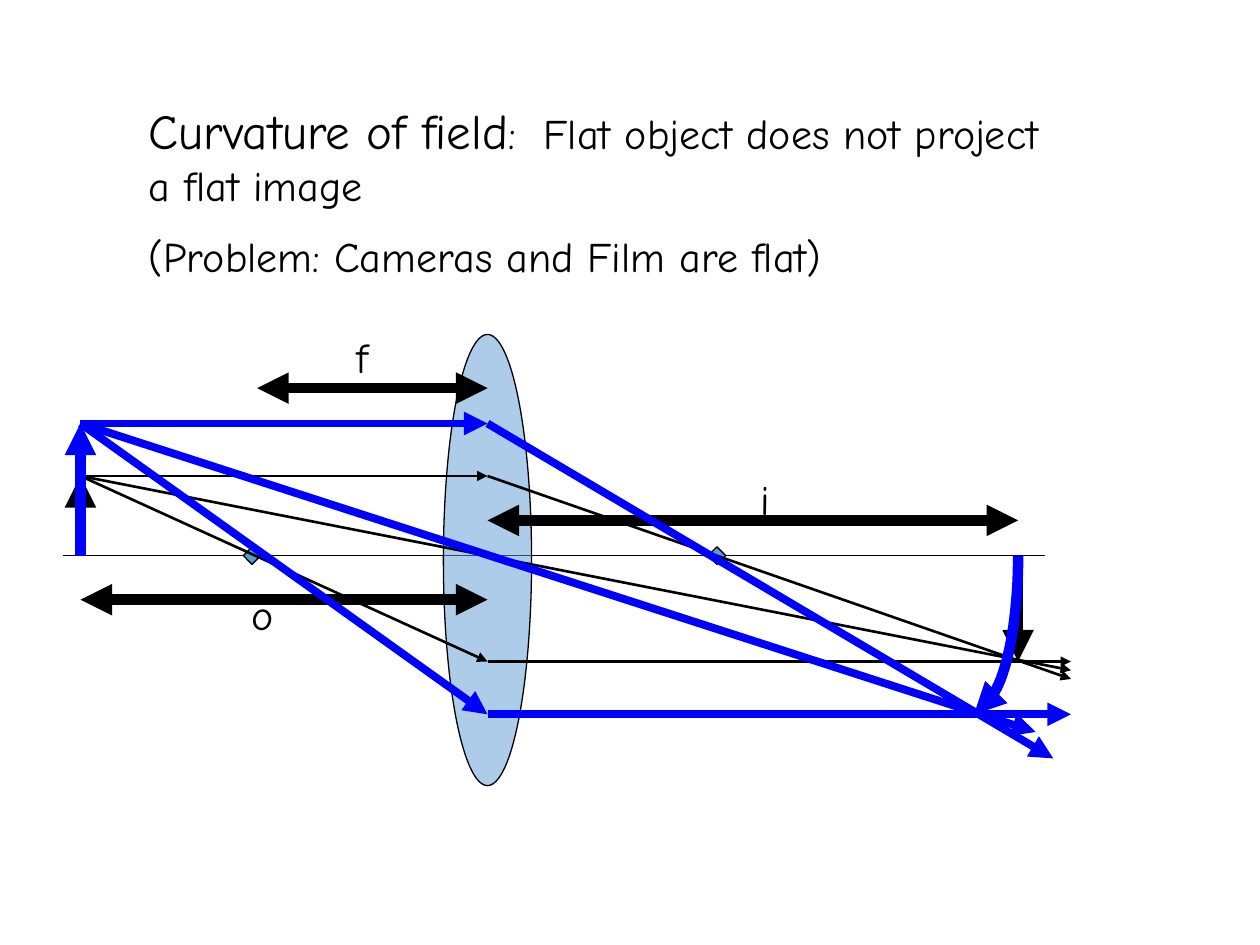
import pptx
import pptx.dml.color
import pptx.enum.dml
import pptx.enum.shapes
import pptx.enum.text
import pptx.oxml.ns
import pptx.util
from dataclasses import dataclass
from lxml import etree

Pt = pptx.util.Pt
RGB = pptx.dml.color.RGBColor
SHAPES = pptx.enum.shapes.MSO_SHAPE
qn = pptx.oxml.ns.qn


@dataclass(frozen=True)
class Theme:
    font: str = "Comic Neue"
    heading: float = 28
    body: float = 24
    black: RGB = RGB(0x00, 0x00, 0x00)
    blue: RGB = RGB(0x00, 0x00, 0xFF)
    glass: RGB = RGB(0x5B, 0x9B, 0xD5)
    hairline: float = 0.75
    thin_ray: float = 1.5
    thick_ray: float = 4.5
    bar: float = 6


theme = Theme()
deck = pptx.Presentation()
deck.slide_width, deck.slide_height = Pt(720), Pt(540)
page = deck.slides.add_slide(deck.slide_layouts[6])


def add_text(paragraphs, left, top, width, height, wrap=True, space_before=0):
    """Each paragraph is a list of (text, size) spans."""
    box = page.shapes.add_textbox(Pt(left), Pt(top), Pt(width), Pt(height))
    frame = box.text_frame
    frame.word_wrap = wrap
    frame.auto_size = pptx.enum.text.MSO_AUTO_SIZE.SHAPE_TO_FIT_TEXT
    for index, spans in enumerate(paragraphs):
        para = frame.add_paragraph() if index else frame.paragraphs[0]
        para.space_before = Pt(space_before if index else 0)
        for text, size in spans:
            span = para.add_run()
            span.text = text
            span.font.name = theme.font
            span.font.size = Pt(size)
            span.font.color.rgb = theme.black


def add_line(start, end, color, weight, arrows=("tailEnd",)):
    """Draw a straight line; tailEnd puts an arrowhead at end, headEnd at start."""
    line = page.shapes.add_connector(
        pptx.enum.shapes.MSO_CONNECTOR.STRAIGHT, *map(Pt, start + end))
    line.line.color.rgb = color
    line.line.width = Pt(weight)
    for arrow in arrows:
        etree.SubElement(line.line._get_or_add_ln(), qn("a:" + arrow), type="triangle")
    etree.SubElement(line._element.spPr, qn("a:effectLst"))


# Landmarks of the optical bench
object_x, lens_x, image_x, ray_end_x = 46, 278.6, 581.8, 612
axis_y = 317.5
small_top, small_image = 272, 378
large_top, large_image = 242, 408.2
both_ends = ("headEnd", "tailEnd")

add_text([[("Curvature of field", theme.heading),
           (":  Flat object does not project a flat image", theme.body)],
          [("(Problem: Cameras and Film are flat)", theme.body)]],
         78, 54, 540, 260, space_before=12)

add_line((36, axis_y), (597, axis_y), theme.black, theme.hairline, arrows=())

# Lens and the two focal points
solids = [
    (SHAPES.OVAL, lens_x, 320, 50.4, 257.8),
    (SHAPES.DIAMOND, 409.7, axis_y, 10, 10),
    (SHAPES.DIAMOND, 144, axis_y, 10, 10),
]
for kind, center_x, center_y, width, height in solids:
    solid = page.shapes.add_shape(kind, Pt(center_x - width / 2), Pt(center_y - height / 2),
                                  Pt(width), Pt(height))
    solid.shadow.inherit = False
    solid.fill.solid()
    solid.fill.fore_color.rgb = theme.glass
    solid.line.color.rgb = theme.black
    solid.line.width = Pt(theme.hairline)
    if kind == SHAPES.OVAL:
        tint = solid._element.spPr.find(qn("a:solidFill"))[0]
        etree.SubElement(tint, qn("a:alpha"), val="50000")

# Small object, its rays and its image
small_tip = (object_x, small_top)
small_rays = [
    (small_tip, (ray_end_x, 383)),
    (small_tip, (lens_x, small_top)),
    ((lens_x, small_top), (ray_end_x, 388)),
    (small_tip, (lens_x, small_image)),
    ((lens_x, small_image), (ray_end_x, small_image)),
]
for start, end in small_rays:
    add_line(start, end, theme.black, theme.thin_ray)
add_line((object_x, axis_y), small_tip, theme.black, theme.bar)
add_line((image_x, axis_y), (image_x, small_image), theme.black, theme.bar)

# Distances: focal length, image distance, object distance
distances = [
    ("f", 146.9, lens_x, 221.8, (196.6, 185.8, 22.3)),
    ("i", lens_x, image_x, 297.4, (427.7, 267.1, 18)),
    ("o", object_x, lens_x, 342.7, (136.8, 332.6, 23)),
]
for name, left, right, level, (label_x, label_y, label_width) in distances:
    add_line((left, level), (right, level), theme.black, theme.bar, arrows=both_ends)
    add_text([[(name, theme.body)]], label_x, label_y, label_width, 34.6, wrap=False)

# Curved image: a cubic curve from the axis down to the large image
controls = [(image_x, axis_y), (image_x, 360.7), (573.1, 397.4), (561.6, 402.5)]
steps = 24
curve = []
for step in range(steps + 1):
    t = step / steps
    weights = ((1 - t) ** 3, 3 * t * (1 - t) ** 2, 3 * t ** 2 * (1 - t), t ** 3)
    curve.append(tuple(Pt(sum(w * point[axis] for w, point in zip(weights, controls)))
                       for axis in (0, 1)))
builder = page.shapes.build_freeform(*curve[0])
builder.add_line_segments(curve[1:], close=False)
arc = builder.convert_to_shape()
arc.shadow.inherit = False
arc.fill.background()
arc.line.color.rgb = theme.blue
arc.line.width = Pt(theme.bar)
add_line((566.6, 398.2), (556.6, large_image), theme.blue, theme.bar)

# Large object and its rays
large_tip = (object_x, large_top)
large_rays = [
    (large_tip, (591.8, 418.3)),
    (large_tip, (lens_x, large_top)),
    ((lens_x, large_top), (601.9, 433.4)),
    (large_tip, (lens_x, large_image)),
    ((lens_x, large_image), (ray_end_x, large_image)),
]
for start, end in large_rays:
    add_line(start, end, theme.blue, theme.thick_ray)
add_line((object_x, axis_y), large_tip, theme.blue, theme.bar)

deck.save("out.pptx")
